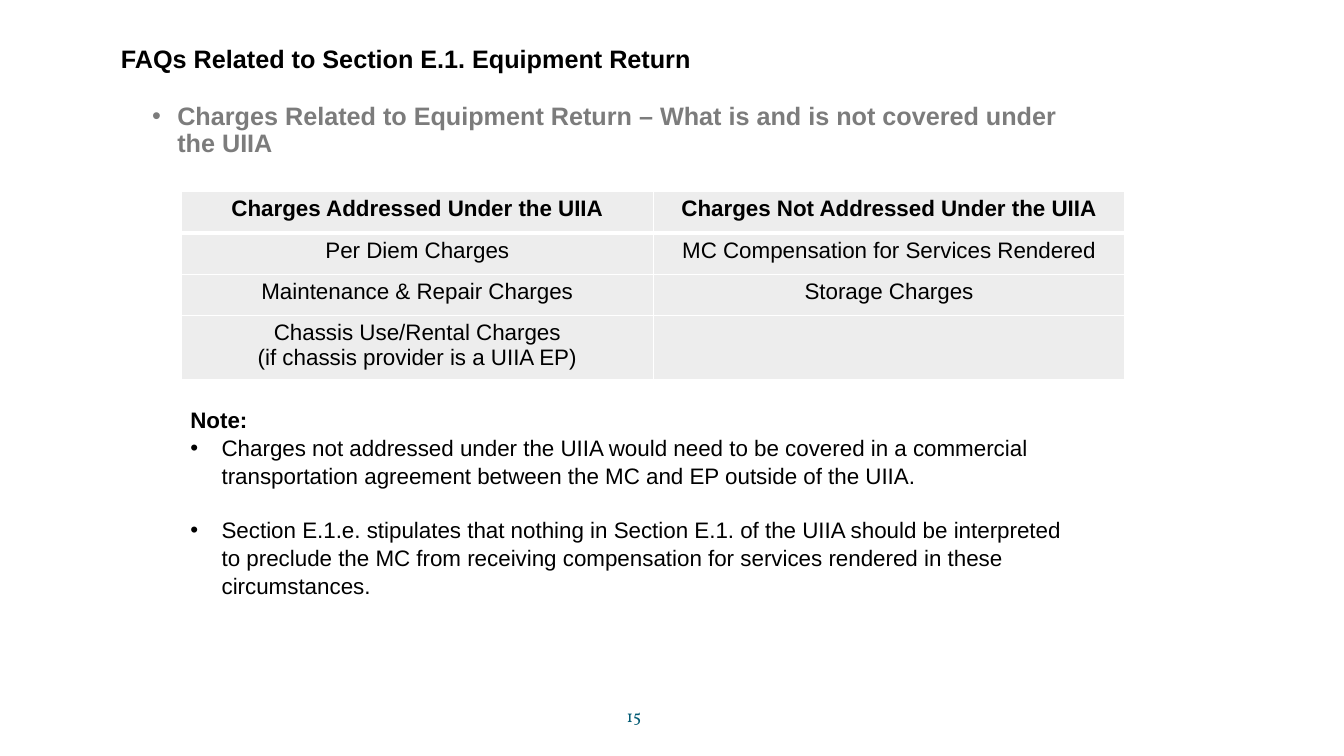
from lxml import etree
from pptx import Presentation, util as u
from pptx.dml import color
from pptx.enum import text
from pptx.oxml import ns

WIDTH, HEIGHT = u.Inches(13.33), u.Inches(7.5)
BLACK, GREY, TEAL, PALE, WHITE = "000000", "7C7C7C", "045C75", "EDEDED", "FFFFFF"


def rgb(value):
    return color.RGBColor.from_string(value)


def across(percent):
    return round(WIDTH * percent / 100)


def down(percent):
    return round(HEIGHT * percent / 100)


def area(left, top, width, height):
    return across(left), down(top), across(width), down(height)


def write(paragraph, content, size=16, font="Arial", fill=BLACK, bold=False,
          align=text.PP_ALIGN.LEFT, spacing=1.0, before=0, bullet_indent=0):
    if bullet_indent:
        properties = paragraph._p.get_or_add_pPr()
        properties.set("marL", str(u.Inches(bullet_indent)))
        properties.set("indent", str(-u.Inches(bullet_indent)))
        etree.SubElement(properties, ns.qn("a:buFont"), typeface="Arial")
        etree.SubElement(properties, ns.qn("a:buChar"), char="•")
    paragraph.text = content
    paragraph.alignment = align
    paragraph.line_spacing = spacing
    paragraph.space_before = u.Pt(before)
    for run in paragraph.runs:
        run.font.size = u.Pt(size)
        run.font.name = font
        run.font.bold = bold
        run.font.color.rgb = rgb(fill)


class SlideBuilder:
    def __init__(self, presentation):
        self.slide = presentation.slides.add_slide(presentation.slide_layouts[5])

    def title(self, content, place, **style):
        shape = self.slide.shapes.title
        shape.left, shape.top, shape.width, shape.height = area(*place)
        frame = shape.text_frame
        frame.auto_size = text.MSO_AUTO_SIZE.NONE
        frame.vertical_anchor = text.MSO_ANCHOR.MIDDLE
        write(frame.paragraphs[0], content, **style)

    def text_box(self, entries, place, anchor=text.MSO_ANCHOR.TOP):
        frame = self.slide.shapes.add_textbox(*area(*place)).text_frame
        frame.word_wrap = True
        frame.vertical_anchor = anchor
        for index, (content, style) in enumerate(entries):
            paragraph = frame.add_paragraph() if index else frame.paragraphs[0]
            write(paragraph, content, **style)

    def borders(self, cell, **widths):
        properties = cell._tc.get_or_add_tcPr()
        for side in "LRTB":
            line = etree.SubElement(properties, ns.qn(f"a:ln{side}"),
                                    w=str(u.Pt(widths.get(side, 1))))
            solid = etree.SubElement(line, ns.qn("a:solidFill"))
            etree.SubElement(solid, ns.qn("a:srgbClr"), val=WHITE)

    def table(self, rows, row_heights, place):
        table = self.slide.shapes.add_table(
            len(rows), len(rows[0]), *area(*place, sum(row_heights))).table
        table.first_row = table.horz_banding = False
        for row_index, (row, height) in enumerate(zip(rows, row_heights)):
            table.rows[row_index].height = down(height)
            for column_index, content in enumerate(row):
                cell = table.cell(row_index, column_index)
                self.borders(cell, T=3 if row_index == 1 else 1,
                             B=3 if row_index == 0 else 1)
                cell.fill.solid()
                cell.fill.fore_color.rgb = rgb(PALE)
                write(cell.text_frame.paragraphs[0], content,
                      bold=row_index == 0, align=text.PP_ALIGN.CENTER)


def main():
    presentation = Presentation()
    presentation.slide_width, presentation.slide_height = WIDTH, HEIGHT
    builder = SlideBuilder(presentation)
    builder.title("FAQs Related to Section E.1. Equipment Return",
                  (8.25, 5.73, 67.5, 4.4), size=18, bold=True, spacing=0.9)
    builder.text_box(
        [("Charges Related to Equipment Return – What is and is not covered under the UIIA",
          dict(size=18, fill=GREY, bold=True, spacing=0.9, bullet_indent=0.25))],
        (10.58, 13.07, 71.2, 77.73))
    builder.table(
        [("Charges Addressed Under the UIIA", "Charges Not Addressed Under the UIIA"),
         ("Per Diem Charges", "MC Compensation for Services Rendered"),
         ("Maintenance & Repair Charges", "Storage Charges"),
         ("Chassis Use/Rental Charges\v(if chassis provider is a UIIA EP)", "")],
        (5.47, 5.47, 5.47, 8.4), (13.5, 25.33, 70.2))
    note = dict(spacing=1.04, bullet_indent=0.31)
    builder.text_box(
        [("Note:", dict(bold=True, spacing=1.04)),
         ("Charges not addressed under the UIIA would need to be covered in a commercial "
          "transportation agreement between the MC and EP outside of the UIIA.", note),
         ("Section E.1.e. stipulates that nothing in Section E.1. of the UIIA should be "
          "interpreted to preclude the MC from receiving compensation for services "
          "rendered in these circumstances.", dict(note, before=19))],
        (13.43, 52.93, 67.5, 26.53))
    builder.text_box(
        [("15", dict(size=12, font="Vollkorn", fill=TEAL, align=text.PP_ALIGN.CENTER))],
        (35.93, 92, 22.5, 5.33), anchor=text.MSO_ANCHOR.MIDDLE)
    presentation.save("out.pptx")


if __name__ == "__main__":
    main()
